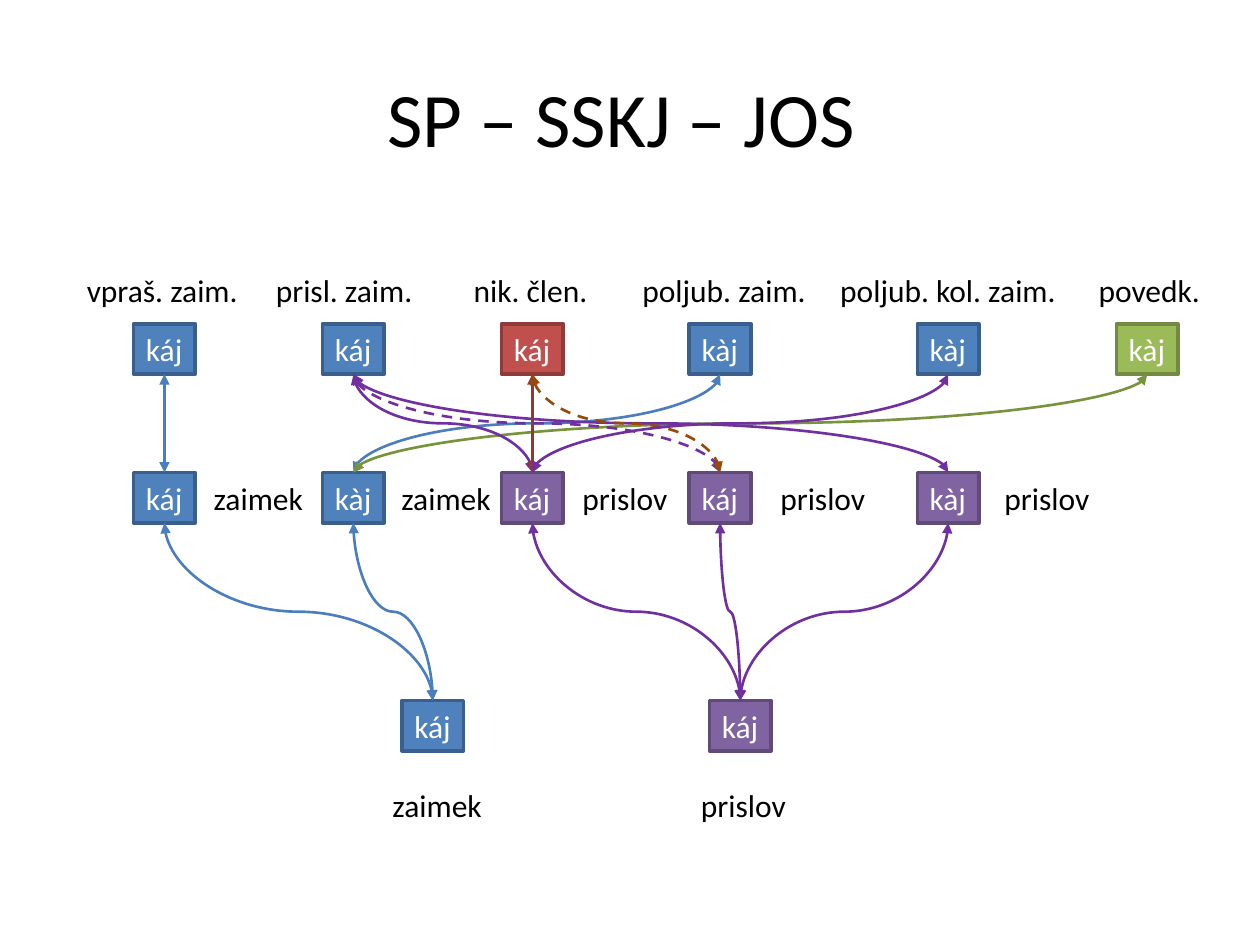
from dataclasses import dataclass

from lxml.etree import SubElement
from pptx import Presentation
from pptx.dml.color import RGBColor
from pptx.enum.dml import MSO_LINE_DASH_STYLE as Dash
from pptx.enum.shapes import MSO_CONNECTOR as Link, MSO_SHAPE as Shape
from pptx.enum.text import MSO_ANCHOR as Anchor, MSO_AUTO_SIZE as AutoSize, PP_ALIGN as Align
from pptx.oxml.ns import qn
from pptx.util import Inches, Pt


@dataclass(frozen=True)
class Theme:
    font: str = "Calibri"
    title_size: int = 44
    body_size: int = 18
    ink: str = "000000"
    paper: str = "FFFFFF"
    box_line: float = 2
    link_line: float = 1.5


THEME = Theme()
BOX_COLOURS = {
    "blue": ("4F81BD", "3A5F8C"),
    "red": ("C0504D", "8E3B39"),
    "green": ("9BBB59", "738A42"),
    "purple": ("8064A2", "5F4A78"),
}
LINK_COLOURS = {
    "blue": "4B7EBC",
    "green": "77933C",
    "purple": "7030A0",
    "red": "953735",
    "brown": "984807",
}
BOX_WIDTH, ROW_HEIGHT = 0.49, 0.4
COLUMNS = [1.06, 2.56, 3.98, 5.47, 7.28, 8.86]

TITLE = "SP – SSKJ – JOS "
BOX_ROWS = {
    "SP": (2.57, COLUMNS, [("káj", "blue"), ("káj", "blue"), ("káj", "red"),
                           ("kàj", "blue"), ("kàj", "blue"), ("kàj", "green")]),
    "SSKJ": (3.75, COLUMNS, [("káj", "blue"), ("kàj", "blue"), ("káj", "purple"),
                             ("káj", "purple"), ("kàj", "purple")]),
    "JOS": (5.56, [3.19, 5.63], [("káj", "blue"), ("káj", "purple")]),
}
LABEL_ROWS = [
    (2.1, Align.LEFT, [("vpraš. zaim.", 0.59, 1.42), ("prisl. zaim.", 2.09, 1.42),
                       ("nik. člen.", 3.66, 1.18), ("poljub. zaim.", 5, 1.57),
                       ("poljub. kol. zaim.", 6.57, 1.97), ("povedk.", 8.62, 1.02)]),
    (3.75, Align.CENTER, [("zaimek", 1.38, 1.34), ("zaimek", 2.87, 1.34),
                          ("prislov", 4.37, 1.18), ("prislov", 5.94, 1.18),
                          ("prislov", 7.68, 1.26)]),
    (6.19, Align.CENTER, [("zaimek", 2.8, 1.34), ("prislov", 5.31, 1.18)]),
]
LINKS = [
    ("SP", "SSKJ", [(3, 1, "blue", False), (5, 1, "green", False),
                    (1, 2, "purple", False), (1, 4, "purple", False),
                    (2, 2, "red", False), (0, 0, "blue", False),
                    (1, 3, "purple", True)]),
    ("SSKJ", "JOS", [(0, 0, "blue", False), (1, 0, "blue", False),
                     (2, 1, "purple", False), (3, 1, "purple", False),
                     (4, 1, "purple", False)]),
    ("SP", "SSKJ", [(2, 3, "brown", True), (4, 2, "purple", False)]),
]


def rgb(value):
    return RGBColor.from_string(value)


def write(frame, text, size, colour, align):
    para = frame.paragraphs[0]
    para.alignment = align
    span = para.add_run()
    span.text = text
    span.font.name = THEME.font
    span.font.size = Pt(size)
    span.font.color.rgb = rgb(colour)


def add_text(page, text, left, top, width, height, align, size=THEME.body_size):
    frame = page.shapes.add_textbox(*map(Inches, (left, top, width, height))).text_frame
    frame.word_wrap = True
    write(frame, text, size, THEME.ink, align)
    return frame


def add_box(page, text, left, top, colour):
    fill, line = BOX_COLOURS[colour]
    box = page.shapes.add_shape(
        Shape.RECTANGLE, *map(Inches, (left, top, BOX_WIDTH, ROW_HEIGHT)))
    box.shadow.inherit = False
    box.fill.solid()
    box.fill.fore_color.rgb = rgb(fill)
    box.line.color.rgb = rgb(line)
    box.line.width = Pt(THEME.box_line)
    frame = box.text_frame
    frame.word_wrap = False
    frame.auto_size = AutoSize.SHAPE_TO_FIT_TEXT
    frame.vertical_anchor = Anchor.TOP
    write(frame, text, THEME.body_size, THEME.paper, Align.LEFT)
    return box


def add_link(page, upper, lower, colour, dashed):
    start_x, end_x = (box.left + box.width // 2 for box in (upper, lower))
    start_y, end_y = upper.top + upper.height, lower.top
    drop, spread = end_y - start_y, abs(end_x - start_x)
    link = page.shapes.add_connector(Link.CURVE, start_x, start_y, end_x, end_y)
    link.begin_connect(upper, 2)
    link.end_connect(lower, 0)
    link.left = (start_x + end_x - drop) // 2
    link.top = (start_y + end_y - spread) // 2
    link.width, link.height = drop, spread
    rightward = end_x > start_x
    properties = link._element.spPr
    transform = properties.find(qn("a:xfrm"))
    transform.set("rot", "16200000" if rightward else "5400000")
    transform.set("flipH", "1" if rightward else "0")
    transform.set("flipV", "0")
    link.line.color.rgb = rgb(LINK_COLOURS[colour])
    link.line.width = Pt(THEME.link_line)
    if dashed:
        link.line.dash_style = Dash.DASH
    outline = properties.find(qn("a:ln"))
    for end in ("a:headEnd", "a:tailEnd"):
        SubElement(outline, qn(end), type="triangle")
    SubElement(properties, qn("a:effectLst"))


def main():
    deck = Presentation()
    deck.slide_width, deck.slide_height = Inches(10), Inches(7.5)
    page = deck.slides.add_slide(deck.slide_layouts[6])
    title = add_text(page, TITLE, 0.5, 0.3, 9, 1.25, Align.CENTER, THEME.title_size)
    title.vertical_anchor = Anchor.MIDDLE
    boxes = {
        name: [add_box(page, text, left, top, colour)
               for left, (text, colour) in zip(columns, words)]
        for name, (top, columns, words) in BOX_ROWS.items()
    }
    for top, align, labels in LABEL_ROWS:
        for text, left, width in labels:
            add_text(page, text, left, top, width, ROW_HEIGHT, align)
    for upper, lower, pairs in LINKS:
        for start, end, colour, dashed in pairs:
            add_link(page, boxes[upper][start], boxes[lower][end], colour, dashed)
    deck.save("out.pptx")


if __name__ == "__main__":
    main()
